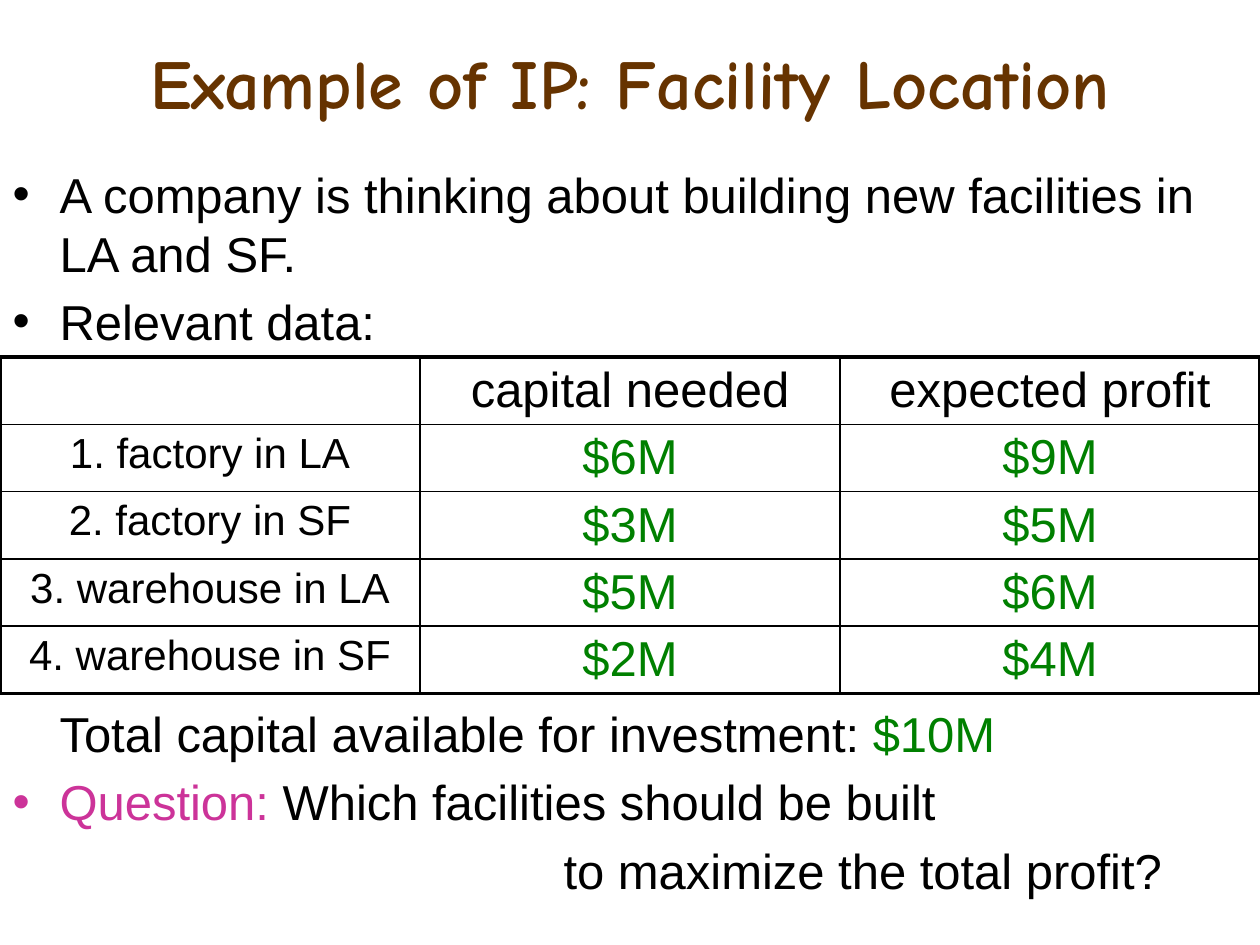
from dataclasses import dataclass

from lxml.etree import SubElement
from pptx import Presentation
from pptx.dml.color import RGBColor
from pptx.enum.text import MSO_ANCHOR, MSO_AUTO_SIZE, PP_ALIGN
from pptx.oxml.ns import qn
from pptx.util import Emu, Pt

PX_PER_INCH = 126


@dataclass(frozen=True)
class Theme:
    heading_font: str = "Comic Neue"
    text_font: str = "Arial"
    heading: str = "663300"
    ink: str = "000000"
    money: str = "008000"
    accent: str = "CC3399"
    title_size: int = 40
    text_size: int = 28
    label_size: int = 24
    line_height: float = 33.6
    paragraph_gap: float = 5.6
    outer_border: float = 2.25
    inner_border: float = 1


THEME = Theme()
HANG = 47  # bullet indent, px
CLOSING_INDENT = 551  # px
TABLE_LINES = 5  # body lines that the table covers

FACILITIES = [
    ["", "capital needed", "expected profit"],
    ["1. factory in LA", "$6M", "$9M"],
    ["2. factory in SF", "$3M", "$5M"],
    ["3. warehouse in LA", "$5M", "$6M"],
    ["4. warehouse in SF", "$2M", "$4M"],
]


def px(length):
    return Emu(round(length * 914400 / PX_PER_INCH))


def place(shape, box):
    shape.left, shape.top, shape.width, shape.height = map(px, box)


def style(font, size, color, name=THEME.text_font, bold=False):
    font.name, font.size, font.bold = name, Pt(size), bold
    font.color.rgb = RGBColor.from_string(color)


def add_title(slide, box):
    title = slide.shapes.title
    place(title, box)
    frame = title.text_frame
    frame.auto_size = MSO_AUTO_SIZE.NONE
    frame.vertical_anchor = MSO_ANCHOR.MIDDLE
    frame.text = "Example of IP: Facility Location"
    heading = frame.paragraphs[0]
    heading.alignment = PP_ALIGN.CENTER
    style(heading.font, THEME.title_size, THEME.heading, THEME.heading_font, True)


def write_paragraph(paragraph, parts, gap=THEME.paragraph_gap, indent=HANG, bullet=True):
    """Fill a body paragraph with (text, colour) parts."""
    paragraph.line_spacing = Pt(THEME.line_height)
    paragraph.space_before = Pt(gap)
    properties = paragraph._p.get_or_add_pPr()
    properties.set("marL", str(px(indent)))
    properties.set("indent", str(-px(HANG) if bullet else 0))
    if bullet:
        SubElement(properties, qn("a:buChar")).set("char", "•")
    else:
        SubElement(properties, qn("a:buNone"))
    for text, color in parts:
        run = paragraph.add_run()
        run.text = text
        style(run.font, THEME.text_size, color)


def add_body(slide, box):
    body = slide.placeholders[1]
    place(body, box)
    frame = body.text_frame
    frame.auto_size = MSO_AUTO_SIZE.NONE
    ink = THEME.ink
    table_gap = THEME.paragraph_gap + TABLE_LINES * (THEME.line_height + THEME.paragraph_gap)

    write_paragraph(
        frame.paragraphs[0],
        [("A company is thinking about building new facilities in LA and SF.", ink)],
        gap=0,
    )
    write_paragraph(frame.add_paragraph(), [("Relevant data:", ink)])
    write_paragraph(
        frame.add_paragraph(),
        [("Total capital available for investment: ", ink), ("$10M", THEME.money)],
        gap=table_gap,
        bullet=False,
    )
    write_paragraph(
        frame.add_paragraph(),
        [("Question:", THEME.accent), (" Which facilities should be built", ink)],
    )
    write_paragraph(
        frame.add_paragraph(),
        [("to maximize the total profit?", ink)],
        indent=CLOSING_INDENT,
        bullet=False,
    )


def set_borders(cell, outer_edges):
    """Draw all four borders, heavier where the edge is on the table's outside."""
    properties = cell._tc.get_or_add_tcPr()
    for position, (edge, is_outer) in enumerate(outer_edges.items()):
        line = SubElement(properties, qn(f"a:ln{edge}"))
        width = THEME.outer_border if is_outer else THEME.inner_border
        line.set("w", str(Pt(width)))
        fill = SubElement(line, qn("a:solidFill"))
        SubElement(fill, qn("a:srgbClr")).set("val", THEME.ink)
        properties.insert(position, line)


def add_facility_table(slide, box, row_height):
    left, top, width, height = box
    row_count, column_count = len(FACILITIES), len(FACILITIES[0])
    holder = slide.shapes.add_table(
        row_count, column_count, px(left), px(top), px(width), px(row_height * row_count)
    )
    holder.height = px(height)
    table = holder.table
    table.first_row = table.horz_banding = False

    for r, row in enumerate(FACILITIES):
        for c, text in enumerate(row):
            cell = table.cell(r, c)
            cell.fill.background()
            set_borders(cell, {
                "L": c == 0,
                "R": c == column_count - 1,
                "T": r == 0,
                "B": r == row_count - 1,
            })
            cell.text = text
            entry = cell.text_frame.paragraphs[0]
            entry.alignment = PP_ALIGN.CENTER
            size = THEME.label_size if r and c == 0 else THEME.text_size
            style(entry.font, size, THEME.money if r and c else THEME.ink)


def main():
    deck = Presentation()
    deck.slide_width, deck.slide_height = px(1260), px(945)
    slide = deck.slides.add_slide(deck.slide_layouts[1])
    add_title(slide, (63, 38, 1134, 88))
    add_body(slide, (0, 158, 1260, 787))
    add_facility_table(slide, (0, 357, 1260, 357), row_height=60)
    deck.save("out.pptx")


if __name__ == "__main__":
    main()
